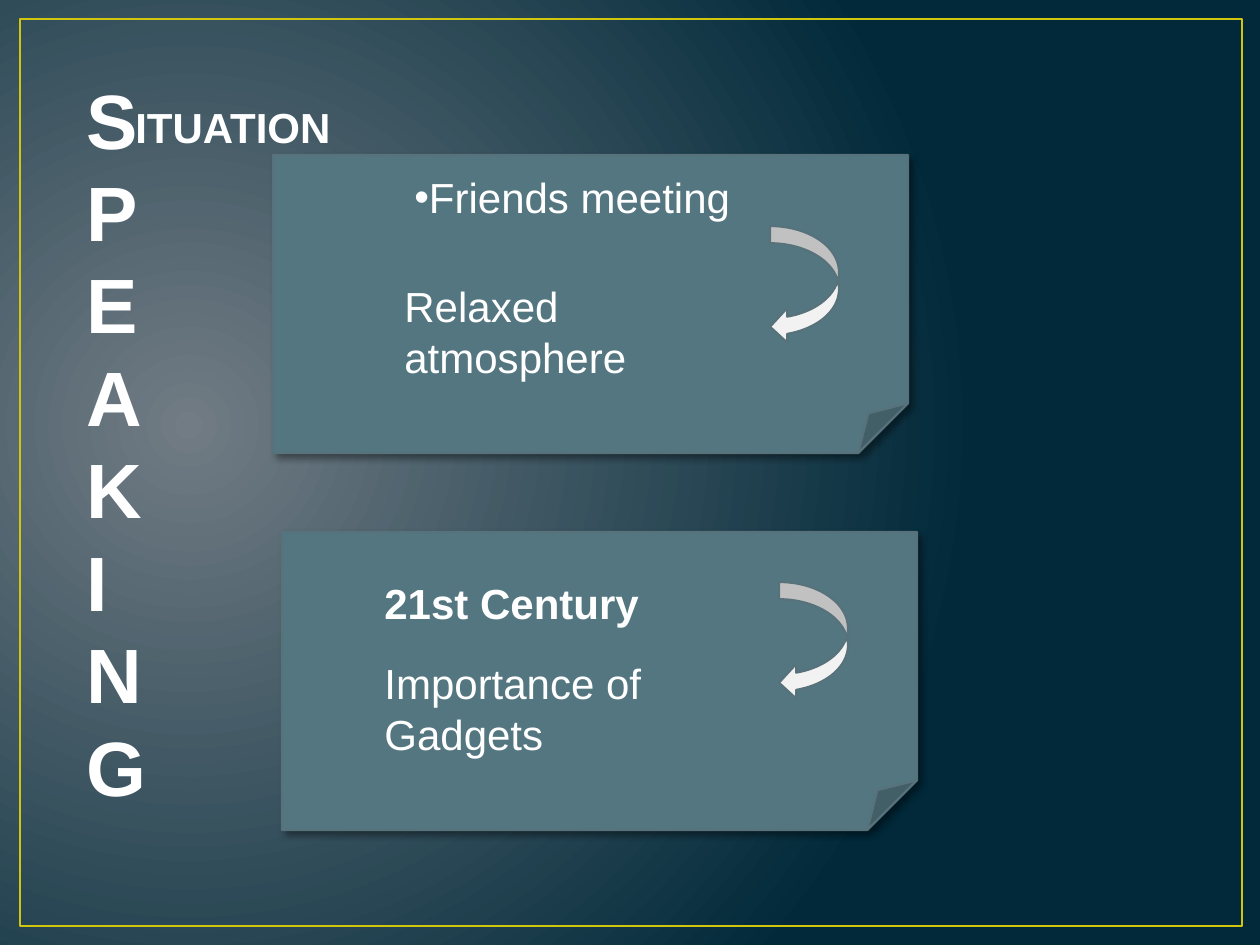
import pptx
import pptx.util
import pptx.dml.color
import pptx.enum.shapes
import pptx.oxml
import pptx.oxml.ns

PX = 914400 // 126
KIND = pptx.enum.shapes.MSO_SHAPE
NS = pptx.oxml.ns.nsdecls("a")
THEME = {
    "font": "Arial", "glow": "717C84", "night": "01293A",
    "frame": "CFC60D", "card": "537680", "edge": "57727A",
    "arrow": "F2F2F2", "text": "FFFFFF",
    "big": 44, "body": 24,
    "lead": {44: 52.8, 24: 28.7},  # line height for each type size
}


def draw(kind, box, fill, line, width):
    shape = slide.shapes.add_shape(kind, *[n * PX for n in box])
    shape.shadow.inherit = False
    if fill:
        shape.fill.solid()
        shape.fill.fore_color.rgb = color(THEME[fill])
    else:
        shape.fill.background()
    shape.line.color.rgb = color(THEME[line])
    shape.line.width = pptx.util.Pt(width)
    return shape


def write(box, lines, size="body", bold=False):
    """Add a text box; a newline within a line is a soft break."""
    frame = slide.shapes.add_textbox(*[n * PX for n in box]).text_frame
    frame.word_wrap = True
    for i, line in enumerate(lines):
        para = frame.add_paragraph() if i else frame.paragraphs[0]
        para.line_spacing = pptx.util.Pt(THEME["lead"][THEME[size]])
        for j, part in enumerate(line.split("\n")):
            if j:
                para.add_line_break()
            run = para.add_run()
            run.text = part
            run.font.name = THEME["font"]
            run.font.size = pptx.util.Pt(THEME[size])
            run.font.bold = bold
            run.font.color.rgb = color(THEME["text"])
    return frame


color = pptx.dml.color.RGBColor.from_string
deck = pptx.Presentation()
deck.slide_width, deck.slide_height = 1260 * PX, 945 * PX
slide = deck.slides.add_slide(deck.slide_layouts[6])

# Background: a round glow left of centre
back = slide.background.fill
back.gradient()
for stop, name in zip(back.gradient_stops, ("glow", "night")):
    stop.color.rgb = color(THEME[name])
for stop, place in zip(back.gradient_stops, (0, 1)):
    stop.position = place
grad = slide.background._cSld.find(".//" + pptx.oxml.ns.qn("a:gradFill"))
lin = grad.find(pptx.oxml.ns.qn("a:lin"))
grad.replace(lin, pptx.oxml.parse_xml(
    f'<a:path {NS} path="circle">'
    '<a:fillToRect l="15000" t="50000" r="85000" b="60000"/></a:path>'))

draw(KIND.RECTANGLE, (20, 19, 1222, 907), None, "frame", 1.5)

# Cards with a soft shadow
for left, top in ((282, 532), (273, 155)):
    card = draw(KIND.FOLDED_CORNER, (left, top, 635, 298), "card", "edge", 1.25)
    props = card._element.spPr
    props.replace(props.find(pptx.oxml.ns.qn("a:effectLst")), pptx.oxml.parse_xml(
        f'<a:effectLst {NS}><a:outerShdw blurRad="50800" dist="38100" '
        'dir="2700000" algn="tl" rotWithShape="0"><a:srgbClr val="000000">'
        '<a:alpha val="40000"/></a:srgbClr></a:outerShdw></a:effectLst>'))

for left, top in ((779, 582), (770, 226)):
    draw(KIND.CURVED_LEFT_ARROW, (left, top, 69, 118), "arrow", "edge", 1.25)

# Headings
write((74, 66, 118, 758), "SPEAKING", "big", True)
write((123, 96, 228, 63), ["ITUATION"], bold=True)

# Card texts
meet = write((402, 166, 377, 152), ["Friends meeting"])
props = meet.paragraphs[0]._p.get_or_add_pPr()
props.set("marL", "0")
props.set("indent", "0")
props.append(pptx.oxml.parse_xml(f'<a:buFont {NS} typeface="Arial"/>'))
props.append(pptx.oxml.parse_xml(f'<a:buChar {NS} char="•"/>'))
write((392, 275, 349, 115), ["Relaxed\natmosphere"])
write((372, 572, 357, 63), ["21st Century"], bold=True)
write((372, 652, 446, 115), ["Importance of\nGadgets"])

deck.save("out.pptx")
